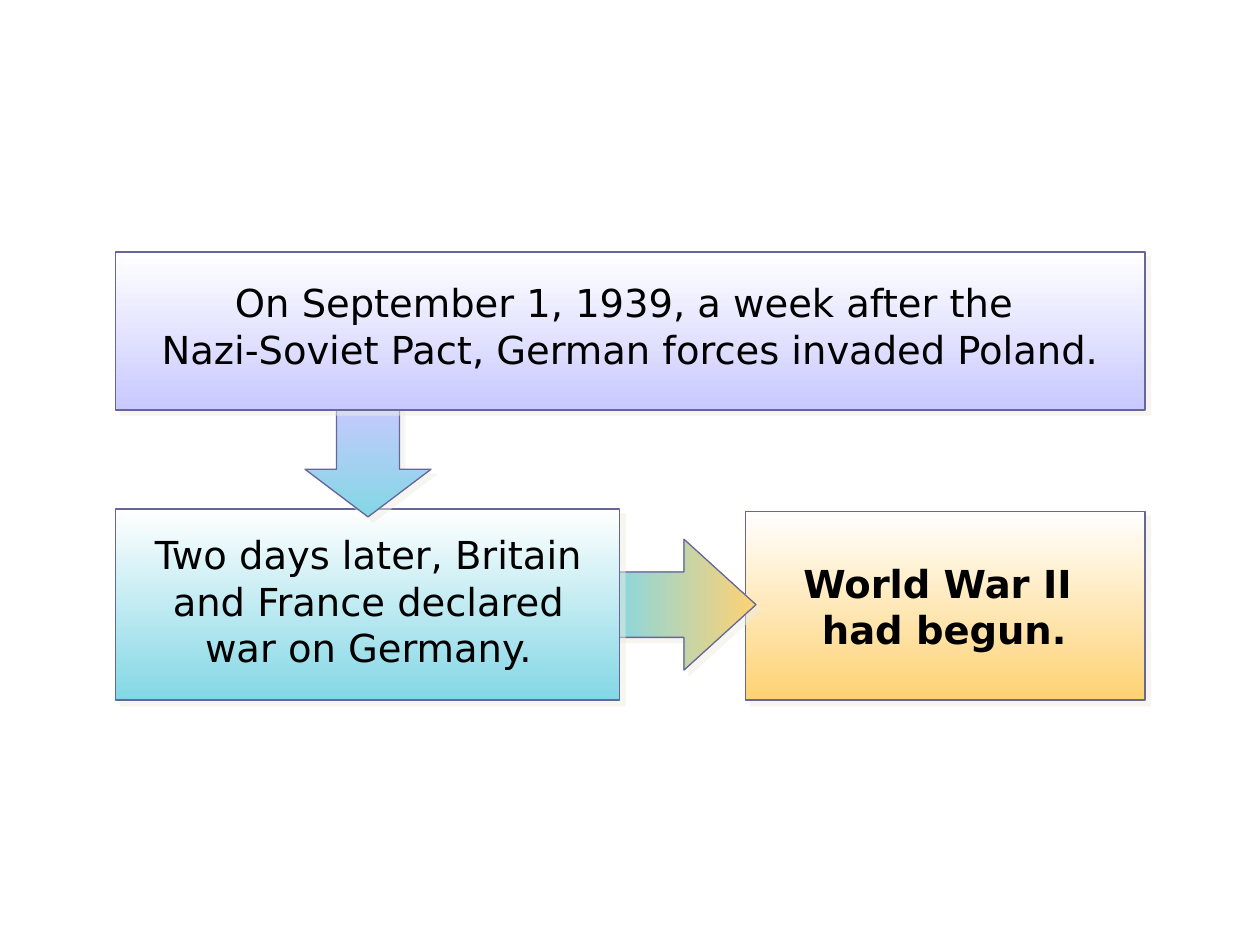
from lxml.etree import SubElement
from pptx import Presentation
from pptx.dml.color import RGBColor
from pptx.enum.shapes import MSO_SHAPE
from pptx.enum.text import MSO_AUTO_SIZE, PP_ALIGN
from pptx.oxml.ns import qn
from pptx.util import Cm, Pt

WHITE = RGBColor(0xFF, 0xFF, 0xFF)
BLACK = RGBColor(0x00, 0x00, 0x00)
LILAC = RGBColor(0xC9, 0xC9, 0xFF)
TEAL = RGBColor(0x83, 0xD7, 0xE5)
AMBER = RGBColor(0xFE, 0xD2, 0x73)
OUTLINE = RGBColor(0x66, 0x66, 0x99)
SHADOW = RGBColor(0xEE, 0xEC, 0xE1)

DOWNWARD, RIGHTWARD = 270, 0


def add_shadow(sp):
    sp.shadow.inherit = False
    effects = sp._element.spPr.find(qn("a:effectLst"))
    outer = SubElement(effects, qn("a:outerShdw"), dist=str(Pt(4.2)),
                       dir="2700000", algn="ctr", rotWithShape="0")
    color = SubElement(outer, qn("a:srgbClr"), val=str(SHADOW))
    SubElement(color, qn("a:alpha"), val="50000")


def add_gradient_shape(shapes, kind, box, colors, angle, line_width):
    sp = shapes.add_shape(kind, *map(Cm, box))
    sp.fill.gradient()
    sp.fill.gradient_angle = angle
    for stop, position, color in zip(sp.fill.gradient_stops, (0, 1), colors):
        stop.position = position
        stop.color.rgb = color
    sp.line.color.rgb = OUTLINE
    sp.line.width = Pt(line_width)
    add_shadow(sp)
    return sp


def add_panel(s, box, color, text, text_box, bold=False):
    shapes = s.shapes.add_group_shape().shapes
    add_gradient_shape(shapes, MSO_SHAPE.RECTANGLE, box, (WHITE, color), DOWNWARD, 1)
    left, top = box[:2]
    dx, dy, width, height = text_box
    tb = shapes.add_textbox(Cm(left + dx), Cm(top + dy), Cm(width), Cm(height))
    tf = tb.text_frame
    tf.word_wrap = True
    tf.auto_size = MSO_AUTO_SIZE.SHAPE_TO_FIT_TEXT
    p = tf.paragraphs[0]
    p.text = text
    p.alignment = PP_ALIGN.CENTER
    for r in p.runs:
        for name, value in {"name": "DejaVu Sans", "size": Pt(22), "bold": bold}.items():
            setattr(r.font, name, value)
        r.font.color.rgb = BLACK


def add_arrow(s, kind, box, colors, angle, head):
    sp = add_gradient_shape(s.shapes, kind, box, colors, angle, 0.75)
    sp.adjustments[0] = 0.5
    sp.adjustments[1] = head


def main():
    prs = Presentation()
    prs.slide_width, prs.slide_height = Cm(25.4), Cm(19.05)
    s = prs.slides.add_slide(prs.slide_layouts[6])
    add_panel(s, (15.03, 10.31, 8.05, 3.81), AMBER,
              "World War II \vhad begun.", (0.18, 0.86, 7.65, 2.11), bold=True)
    add_arrow(s, MSO_SHAPE.RIGHT_ARROW, (12.27, 10.87, 2.97, 2.64),
              (TEAL, AMBER), RIGHTWARD, 0.55)
    add_panel(s, (2.33, 10.26, 10.16, 3.86), TEAL,
              "Two days later, Britain and France declared war on Germany.",
              (0.28, 0.33, 9.63, 3.05))
    add_arrow(s, MSO_SHAPE.DOWN_ARROW, (6.15, 8.08, 2.54, 2.34),
              (LILAC, TEAL), DOWNWARD, 0.41)
    add_panel(s, (2.33, 5.08, 20.75, 3.18), LILAC,
              "On September 1, 1939, a week after the \v"
              "Nazi-Soviet Pact, German forces invaded Poland.",
              (0.25, 0.43, 20.24, 2.11))
    prs.save("out.pptx")


if __name__ == "__main__":
    main()
